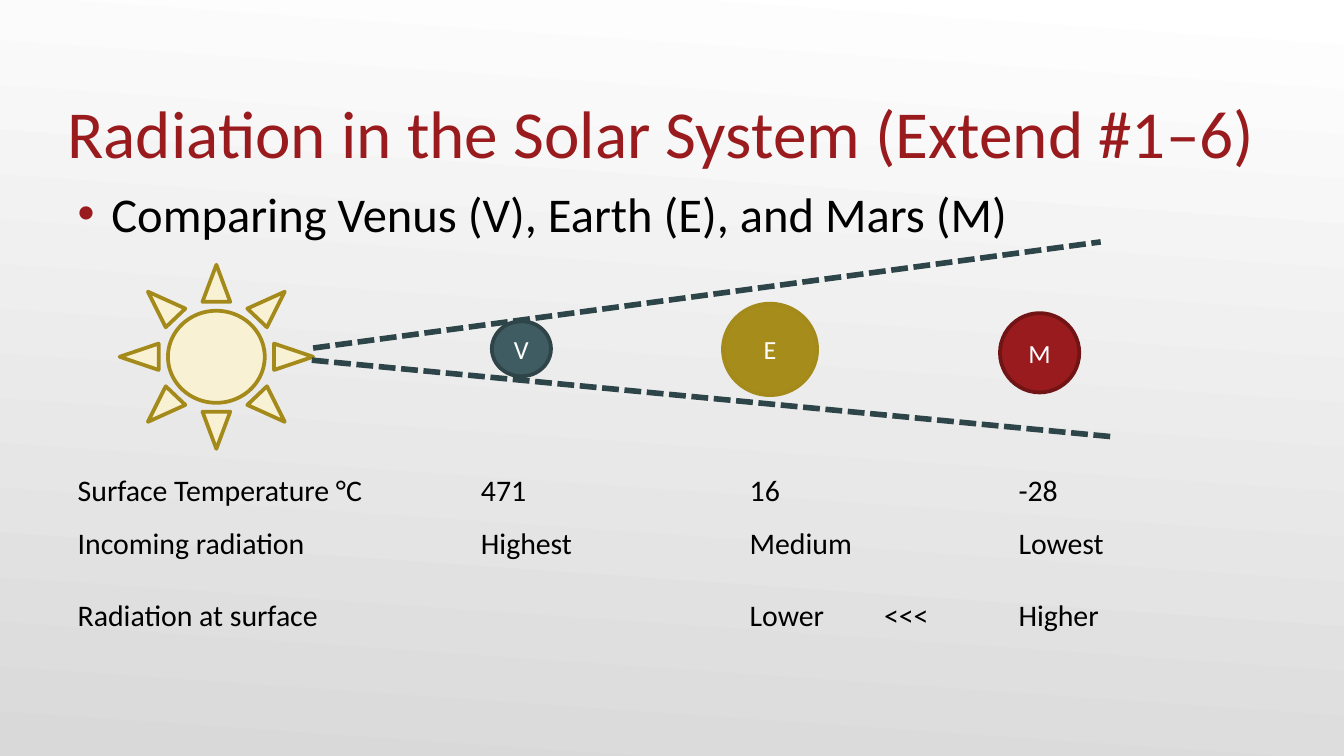
from lxml import etree
from pptx import Presentation
from pptx.dml.color import RGBColor
from pptx.enum.dml import MSO_LINE
from pptx.enum.shapes import MSO_CONNECTOR, MSO_SHAPE
from pptx.enum.text import MSO_ANCHOR, PP_ALIGN
from pptx.oxml.ns import qn
from pptx.util import Inches, Pt

STRAIGHT = MSO_CONNECTOR.STRAIGHT
SUN, OVAL = MSO_SHAPE.SUN, MSO_SHAPE.OVAL
DASH = MSO_LINE.SQUARE_DOT
TOP, MIDDLE, BOTTOM = MSO_ANCHOR.TOP, MSO_ANCHOR.MIDDLE, MSO_ANCHOR.BOTTOM
CENTER = PP_ALIGN.CENTER

FONT = "Calibri"
COLORS = {
    "red": "991B1E", "dark red": "711416", "black": "000000", "white": "FFFFFF",
    "gray": "D9D9D9", "cream": "F8F1D3", "gold": "A68C1B", "dark gold": "A38A1B",
    "teal": "3E5C61", "dark teal": "2E4448", "ray": "2D4448",
}

TITLE = "Radiation in the Solar System (Extend #1–6)"
BULLET = "Comparing Venus (V), Earth (E), and Mars (M)"

# shape, letter, (left, top, width, height), fill, line
BODIES = [
    (SUN, "", (0.89, 1.97, 1.44, 1.37), "cream", "dark gold"),
    (OVAL, "E", (5.38, 2.26, 0.7, 0.68), "gold", "dark gold"),
    (OVAL, "M", (7.44, 2.33, 0.59, 0.59), "red", "dark red"),
    (OVAL, "V", (3.66, 2.39, 0.44, 0.41), "teal", "dark teal"),
]
RAYS = [((2.33, 2.59), (8.19, 1.8)), ((2.32, 2.68), (8.28, 3.25))]

# line spacing, then label, Venus, Earth, comparison, Mars
ROWS = [
    (2, ("Surface Temperature °C", "471", "16", "", "-28")),
    (1.5, ("Incoming radiation", "Highest", "Medium", "", "Lowest")),
    (2, ("Radiation at surface", "", "Lower", "<<<", "Higher")),
]
TAB_STOPS = (3, 5, 6, 7)


def color(name):
    return RGBColor.from_string(COLORS[name])


def add_run(paragraph, text, size, color_name):
    run = paragraph.add_run()
    run.text = text
    run.font.name = FONT
    run.font.size = Pt(size)
    run.font.color.rgb = color(color_name)


def add_text_frame(slide, box, anchor=TOP):
    frame = slide.shapes.add_textbox(*map(Inches, box)).text_frame
    frame.word_wrap = True
    frame.vertical_anchor = anchor
    return frame


def set_bullet(paragraph, character, color_name):
    properties = paragraph._p.get_or_add_pPr()
    properties.set("marL", str(Inches(0.25)))
    properties.set("indent", str(-Inches(0.25)))
    bullet_color = etree.SubElement(properties, qn("a:buClr"))
    etree.SubElement(bullet_color, qn("a:srgbClr"), val=COLORS[color_name])
    etree.SubElement(properties, qn("a:buFont"), typeface="Arial")
    etree.SubElement(properties, qn("a:buChar"), char=character)


def set_tab_stops(paragraph):
    tabs = etree.SubElement(paragraph._p.get_or_add_pPr(), qn("a:tabLst"))
    for stop in TAB_STOPS:
        etree.SubElement(tabs, qn("a:tab"), pos=str(Inches(stop)), algn="l")


def set_background(slide):
    fill = slide.background.fill
    fill.gradient()
    fill.gradient_angle = 266
    for stop, name in zip(fill.gradient_stops, ("white", "gray")):
        stop.color.rgb = color(name)


def add_body(slide, preset, letter, box, fill, line):
    shape = slide.shapes.add_shape(preset, *map(Inches, box))
    shape.shadow.inherit = False
    shape.fill.solid()
    shape.fill.fore_color.rgb = color(fill)
    shape.line.color.rgb = color(line)
    shape.line.width = Pt(2)
    if letter:
        shape.text_frame.vertical_anchor = MIDDLE
        paragraph = shape.text_frame.paragraphs[0]
        paragraph.alignment = CENTER
        add_run(paragraph, letter, 14, "white")


def add_ray(slide, start, end):
    ray = slide.shapes.add_connector(STRAIGHT, *map(Inches, start + end))
    ray.line.color.rgb = color("ray")
    ray.line.width = Pt(3)
    ray.line.dash_style = DASH
    etree.SubElement(ray._element.spPr, qn("a:effectLst"))


def main():
    presentation = Presentation()
    presentation.slide_width = Inches(10)
    presentation.slide_height = presentation.slide_width * 9 // 16
    slide = presentation.slides.add_slide(presentation.slide_layouts[6])
    set_background(slide)

    title = add_text_frame(slide, (0.5, 0.34, 9, 0.94), BOTTOM)
    title.margin_left = title.margin_right = title.margin_bottom = 0
    add_run(title.paragraphs[0], TITLE, 36, "red")

    bullet = add_text_frame(slide, (0.48, 1.32, 9.32, 3.74)).paragraphs[0]
    set_bullet(bullet, "•", "red")
    add_run(bullet, BULLET, 26, "black")

    for body in BODIES:
        add_body(slide, *body)

    comparison = add_text_frame(slide, (0.48, 3.19, 8.21, 1.51))
    for index, (spacing, cells) in enumerate(ROWS):
        paragraph = comparison.add_paragraph() if index else comparison.paragraphs[0]
        set_tab_stops(paragraph)
        paragraph.line_spacing = spacing
        add_run(paragraph, "\t".join(cells), 16, "black")

    for start, end in RAYS:
        add_ray(slide, start, end)

    presentation.save("out.pptx")


if __name__ == "__main__":
    main()
